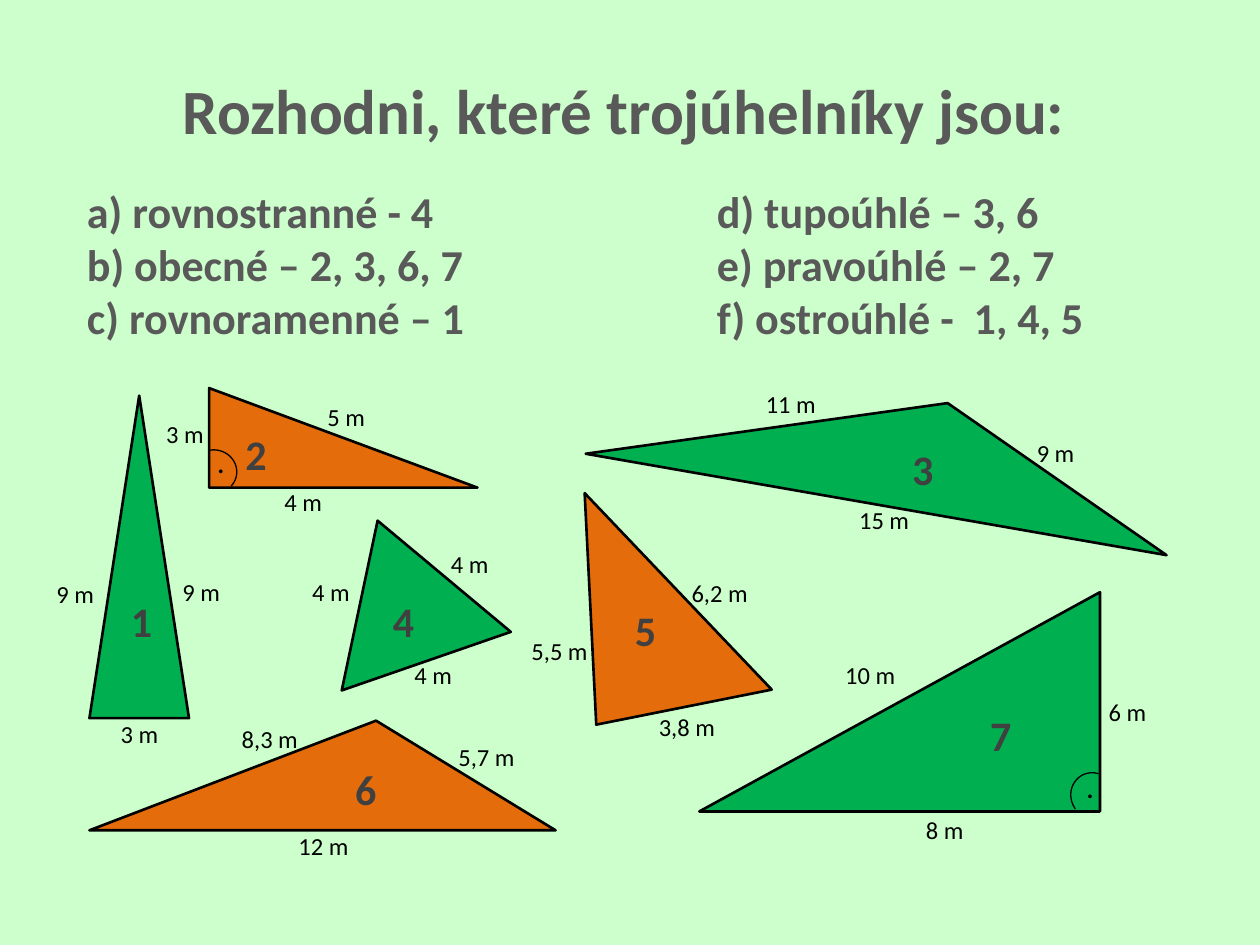
from dataclasses import dataclass

from lxml import etree
from pptx import Presentation
from pptx import util as u
from pptx.dml.color import RGBColor as Rgb
from pptx.enum import shapes, text
from pptx.oxml import ns


@dataclass(frozen=True)
class Theme:
    font: str = "Calibri"
    back: str = "CCFFCC"
    green: str = "00B050"
    orange: str = "E46C0A"
    gray: str = "595959"
    dark: str = "404040"
    black: str = "000000"
    title: float = 36
    body: float = 25.2
    digit: float = 24
    label: float = 14
    dot: float = 18
    edge: float = 1.5
    thin: float = 0.75


theme = Theme()
kind = shapes.MSO_SHAPE


def write(box, lines, size, color, bold=False, wrap=True, anchor=text.MSO_ANCHOR.TOP):
    frame = box.text_frame
    frame.word_wrap = wrap
    frame.auto_size = text.MSO_AUTO_SIZE.NONE
    frame.vertical_anchor = anchor
    for i, line in enumerate(lines):
        para = frame.paragraphs[0] if i == 0 else frame.add_paragraph()
        para.alignment = text.PP_ALIGN.LEFT
        para.space_before = u.Pt(0)
        run = para.add_run()
        run.text = line
        font = run.font
        font.name, font.size, font.bold = theme.font, u.Pt(size), bold
        font.color.rgb = Rgb.from_string(color)


def draw(form, area, turn, adjust, fill, width):
    shape = slide.shapes.add_shape(form, *map(u.Inches, area))
    shape.shadow.inherit = False
    shape.rotation = turn
    for i, value in enumerate(adjust):
        shape.adjustments[i] = value
    if fill:
        shape.fill.solid()
        shape.fill.fore_color.rgb = Rgb.from_string(fill)
    else:
        shape.fill.background()
    shape.line.color.rgb = Rgb.from_string(theme.black)
    shape.line.width = u.Pt(width)


deck = Presentation()
deck.slide_width, deck.slide_height = u.Inches(10), u.Inches(7.5)
slide = deck.slides.add_slide(deck.slide_layouts[3])
slide.background.fill.solid()
slide.background.fill.fore_color.rgb = Rgb.from_string(theme.back)

title = slide.shapes.title
title.left, title.top, title.width, title.height = map(u.Inches, (1.35, 0.52, 7.34, 0.71))
write(title, ["Rozhodni, které trojúhelníky jsou:"], theme.title, theme.gray,
      bold=True, wrap=False)

columns = [
    (1, 0.59, ["a) rovnostranné - 4", "b) obecné – 2, 3, 6, 7", "c) rovnoramenné – 1"]),
    (2, 5.59, ["d) tupoúhlé – 3, 6", "e) pravoúhlé – 2, 7", "f) ostroúhlé -  1, 4, 5"]),
]
for index, left, lines in columns:
    body = slide.placeholders[index]
    body.left, body.top, body.width, body.height = map(u.Inches, (left, 1.23, 4, 1.73))
    write(body, lines, theme.body, theme.gray, bold=True, anchor=text.MSO_ANCHOR.MIDDLE)
    for para in body.text_frame.paragraphs:
        props = para._p.get_or_add_pPr()
        props.set("marL", "0")
        props.set("indent", "0")
        etree.SubElement(props, ns.qn("a:buNone"))

iso, right = kind.ISOSCELES_TRIANGLE, kind.RIGHT_TRIANGLE
figures = [
    (iso, (0.71, 3.14, 0.79, 2.56), 0, [0.5], theme.green),
    (right, (1.66, 3.08, 2.13, 0.79), 0, [], theme.orange),
    (iso, (0.71, 5.72, 3.7, 0.87), 0, [0.615], theme.orange),
    (iso, (2.48, 4.1, 1.42, 1.18), 340.9, [0.5], theme.green),
    (iso, (4.54, 3.81, 1.42, 1.82), 348.7, [0.19], theme.orange),
    (right, (6.27, 3.98, 1.74, 3.18), 270, [], theme.green),
    (iso, (4.69, 3.12, 4.68, 0.89), 9.9, [0.59], theme.green),
]
for form, area, turn, adjust, fill in figures:
    draw(form, area, turn, adjust, fill, theme.edge)

digits = [
    ("7", 7.76, 5.58), ("6", 2.72, 6.01), ("3", 7.14, 3.47), ("5", 4.94, 4.75),
    ("4", 3.02, 4.68), ("2", 1.85, 3.35), ("1", 0.94, 4.68),
]
for name, left, top in digits:
    box = slide.shapes.add_textbox(*map(u.Inches, (left, top, 0.37, 0.5)))
    write(box, [name], theme.digit, theme.dark, bold=True, wrap=False)

sides = [
    ("9 m", 1.35, 4.53, 0.5), ("9 m", 0.35, 4.55, 0.5), ("3 m", 0.86, 5.66, 0.62),
    ("4 m", 2.38, 4.53, 0.7), ("4 m", 3.48, 4.31, 0.57), ("4 m", 3.19, 5.19, 0.7),
    ("4 m", 2.16, 3.82, 0.57), ("3 m", 1.22, 3.28, 0.52), ("5 m", 2.5, 3.14, 0.52),
    ("8,3 m", 1.82, 5.7, 0.69), ("5,7 m", 3.54, 5.84, 0.84), ("12 m", 2.27, 6.55, 0.81),
    ("5,5 m", 4.12, 5, 0.76), ("6,2 m", 5.39, 4.54, 0.71), ("3,8 m", 5.13, 5.6, 0.71),
    ("15 m", 6.72, 3.96, 0.67), ("11 m", 5.98, 3.04, 0.6), ("9 m", 8.13, 3.43, 0.72),
    ("10 m", 6.61, 5.19, 0.83), ("8 m", 7.25, 6.42, 0.65), ("6 m", 8.7, 5.48, 0.6),
]
for name, left, top, width in sides:
    box = slide.shapes.add_textbox(*map(u.Inches, (left, top, width, 0.34)))
    write(box, [name], theme.label, theme.black)

corners = [((1.51, 3.57), 0, (1.66, 3.46)), ((8.49, 6.14), 245, (8.56, 6.04))]
for arc, turn, dot in corners:
    draw(kind.ARC, (*arc, 0.37, 0.35), turn, [154.98, 23.39], None, theme.thin)
    box = slide.shapes.add_textbox(*map(u.Inches, (*dot, 0.16, 0.4)))
    write(box, ["."], theme.dot, theme.black, wrap=False)

deck.save("out.pptx")
